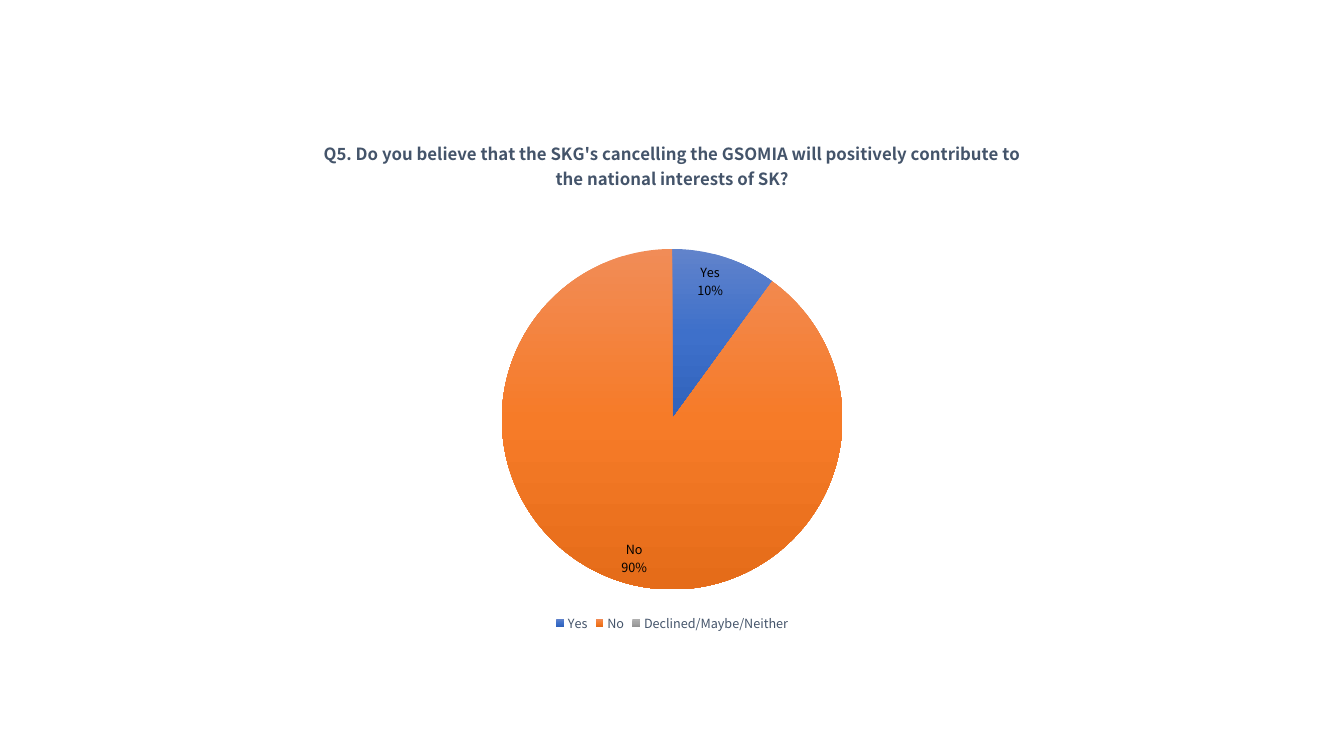
"""Build a survey slide with a pie chart of the answers to question five."""
from copy import deepcopy
from dataclasses import dataclass

from pptx import Presentation
from pptx import util as u
from pptx.chart import data as chart_data
from pptx.dml.color import RGBColor
from pptx.enum import chart as ch
from pptx.oxml import parse_xml
from pptx.oxml.ns import nsdecls, qn


@dataclass(frozen=True)
class Theme:
    font: str = "Noto Sans CJK KR"
    heading: str = "44546A"
    label: str = "000000"
    title_size: float = 12
    base_size: float = 10
    small_size: float = 9


@dataclass(frozen=True)
class Answer:
    name: str
    percent: int
    shades: tuple[str, str, str]


THEME = Theme()
QUESTION = (
    "Q5. Do you believe that the SKG's cancelling the GSOMIA "
    "will positively contribute to the national interests of SK?"
)
ANSWERS = (
    Answer("Yes", 10, ("6183CB", "3E70CA", "3062BB")),
    Answer("No", 90, ("F18C57", "F67B28", "E56C19")),
    Answer("Declined/Maybe/Neither", 0, ("AFAFAF", "A5A5A5", "939393")),
)


def style_font(font, *, size: float, color: str, bold: bool = False) -> None:
    font.name = THEME.font
    font.size = u.Pt(size)
    font.bold = bold
    font.color.rgb = RGBColor.from_string(color)


def write_text(frame, wording: str, **style) -> None:
    frame.text = wording
    style_font(frame.paragraphs[0].runs[0].font, **style)


def shade_slice(point, answer: Answer) -> None:
    fill = point.format.fill
    fill.gradient()
    fill.gradient_angle = 270
    stop_list = next(point.format.fill._xPr.iter(qn("a:gsLst")))
    stop_list.append(deepcopy(stop_list[-1]))
    for position, (stop, shade) in enumerate(zip(fill.gradient_stops, answer.shades)):
        stop.position = position / 2
        stop.color.rgb = RGBColor.from_string(shade)
    point.format.line.fill.background()


def label_slices(responses) -> None:
    labels = responses.data_labels
    labels.show_value = False
    labels.show_category_name = True
    labels.show_percentage = True
    labels.number_format = "0%"
    labels.number_format_is_linked = False
    labels.position = ch.XL_LABEL_POSITION.INSIDE_END
    style_font(labels.font, size=THEME.small_size, color=THEME.label)
    label_list = responses._element.find(qn("c:dLbls"))
    for index, answer in enumerate(ANSWERS):
        if answer.percent == 0:
            label_list.insert(0, parse_xml(
                f'<c:dLbl {nsdecls("c")}><c:idx val="{index}"/>'
                '<c:delete val="1"/></c:dLbl>'
            ))


def place_pie(pie_chart, x: float, y: float, width: float, height: float) -> None:
    plot_area = pie_chart._chartSpace.chart.plotArea
    for old_layout in plot_area.findall(qn("c:layout")):
        plot_area.remove(old_layout)
    sizes = "".join(
        f'<c:{key} val="{value}"/>'
        for key, value in (("x", x), ("y", y), ("w", width), ("h", height))
    )
    plot_area.insert(0, parse_xml(
        f'<c:layout {nsdecls("c")}><c:manualLayout><c:layoutTarget val="inner"/>'
        f'<c:xMode val="edge"/><c:yMode val="edge"/>{sizes}'
        "</c:manualLayout></c:layout>"
    ))


def add_survey_pie(slide) -> None:
    results = chart_data.CategoryChartData()
    results.categories = [answer.name for answer in ANSWERS]
    results.add_series(QUESTION, [answer.percent for answer in ANSWERS])
    pie_chart = slide.shapes.add_chart(
        ch.XL_CHART_TYPE.PIE, u.Pt(154), u.Pt(85.7), u.Pt(652.3), u.Pt(368.6), results
    ).chart
    style_font(pie_chart.font, size=THEME.base_size, color=THEME.label)

    pie_chart.has_title = True
    write_text(pie_chart.chart_title.text_frame, QUESTION,
               size=THEME.title_size, color=THEME.heading, bold=True)
    pie_chart.chart_title.include_in_layout = False

    pie_chart.has_legend = True
    pie_chart.legend.position = ch.XL_LEGEND_POSITION.BOTTOM
    pie_chart.legend.include_in_layout = False
    style_font(pie_chart.legend.font, size=THEME.small_size, color=THEME.heading)

    pie = pie_chart.plots[0]
    pie.vary_by_categories = True
    responses = pie.series[0]
    for index, answer in enumerate(ANSWERS):
        shade_slice(responses.points[index], answer)
    label_slices(responses)
    place_pie(pie_chart, 0.31, 0.25, 0.38, 0.66)


def main() -> None:
    deck = Presentation()
    deck.slide_width, deck.slide_height = u.Pt(960), u.Pt(540)
    add_survey_pie(deck.slides.add_slide(deck.slide_layouts[6]))
    deck.save("out.pptx")


if __name__ == "__main__":
    main()
